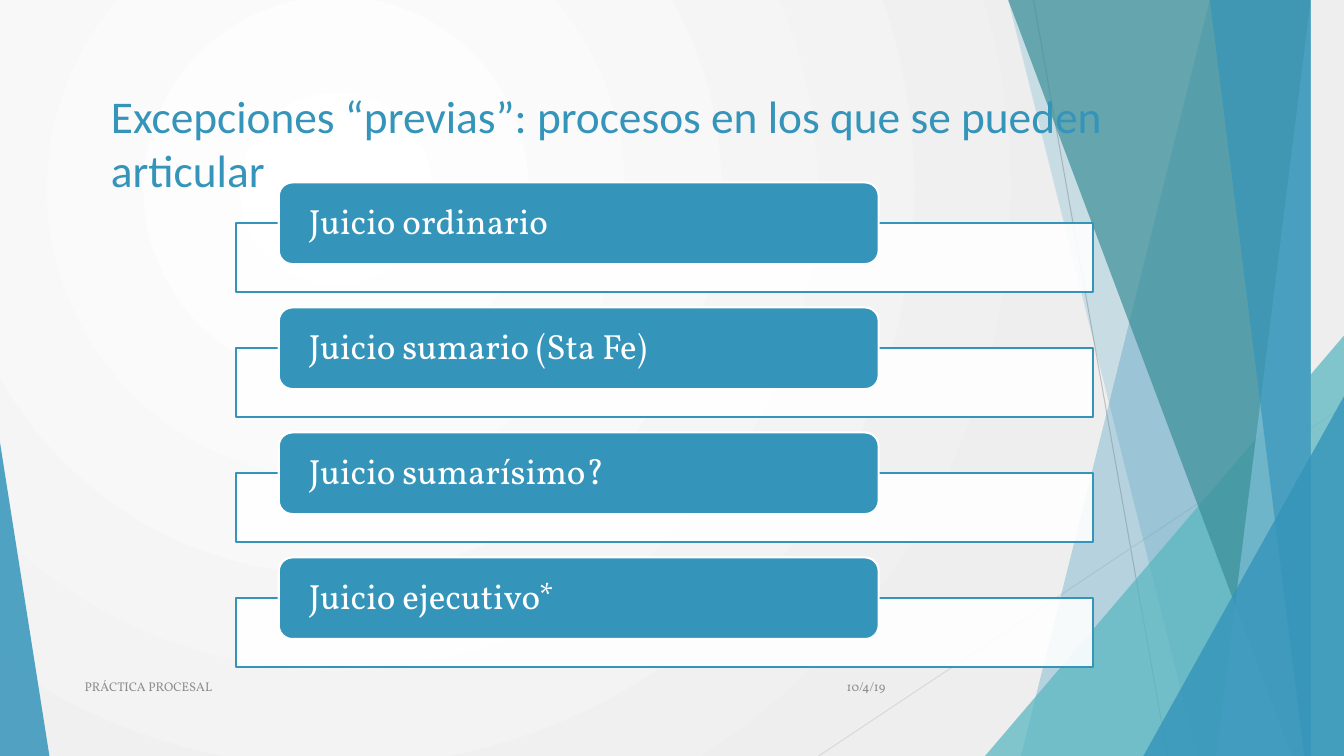
from lxml import etree
from pptx import Presentation
from pptx.dml.color import RGBColor
from pptx.enum.shapes import MSO_CONNECTOR as Conn, MSO_SHAPE as Form
from pptx.enum.text import MSO_ANCHOR as Anchor, MSO_AUTO_SIZE as Fit, PP_ALIGN as Align
from pptx.oxml.ns import qn
from pptx.util import Inches, Pt

WIDE, HIGH = 13.33, 7.5
HUES = {
    "blue": "3494BA", "aqua": "58B6C0", "teal": "3A8F98", "sky": "7FC1DB",
    "white": "FFFFFF", "mist": "EEEEEE", "grey": "8C8C8C",
    "line": "BFBFBF", "pale": "D9D9D9",
}
TRIALS = ["Juicio ordinario", "Juicio sumario (Sta Fe)",
          "Juicio sumarísimo?", "Juicio ejecutivo*"]


def hue(name):
    return RGBColor.from_string(HUES[name])


def paint(shape, fill, alpha=100, edge=None):
    shape.shadow.inherit = False
    shape.fill.solid()
    shape.fill.fore_color.rgb = hue(fill)
    if alpha < 100:
        tint = shape.fill._xPr.find(qn("a:solidFill"))[0]
        etree.SubElement(tint, qn("a:alpha")).set("val", str(alpha * 1000))
    if edge:
        shape.line.color.rgb = hue(edge)
        shape.line.width = Pt(1.5)
    else:
        shape.line.fill.background()


def add(slide, form, box):
    return slide.shapes.add_shape(form, *map(Inches, box))


def write(shape, text, size, face, color, align=Align.LEFT, anchor=Anchor.MIDDLE):
    frame = shape.text_frame
    frame.text = text
    frame.word_wrap = True
    frame.auto_size = Fit.NONE
    frame.vertical_anchor = anchor
    par = frame.paragraphs[0]
    par.alignment = align
    par.font.size, par.font.name = Pt(size), face
    par.font.color.rgb = hue(color)
    return frame


def backdrop(slide):
    fill = slide.background.fill
    fill.gradient()
    for stop, name in zip(fill.gradient_stops, ("white", "mist")):
        stop.color.rgb = hue(name)
    grad = slide.background.element.find(".//" + qn("a:gradFill"))
    grad.remove(grad.find(qn("a:lin")))
    way = etree.Element(qn("a:path"), path="circle")
    etree.SubElement(way, qn("a:fillToRect"), l="50000", t="50000", r="100000", b="100000")
    grad.find(qn("a:gsLst")).addnext(way)


def rule(slide, ends, color):
    line = slide.shapes.add_connector(Conn.STRAIGHT, *map(Inches, ends))
    line.line.color.rgb = hue(color)
    line.line.width = Pt(0.75)
    etree.SubElement(line.element.spPr, qn("a:effectLst"))


def blade(slide, top, foot, color, alpha):
    """Band from a slanted left side to the right edge of the slide."""
    pen = slide.shapes.build_freeform(top, 0, scale=Inches(1))
    pen.add_line_segments([(WIDE, 0), (WIDE, HIGH), (foot, HIGH)], close=True)
    paint(pen.convert_to_shape(), color, alpha)


def wedge(slide, left, top, wide, tip, color, alpha):
    """Triangle that stands on the bottom edge of the slide."""
    part = add(slide, Form.ISOSCELES_TRIANGLE, (left, top, wide, HIGH - top))
    part.adjustments[0] = tip
    paint(part, color, alpha)


def facets(slide):
    rule(slide, (10.25, 0, 11.58, HIGH), "line")
    rule(slide, (WIDE, 4.03, 8.12, HIGH), "pale")
    blade(slide, 12.28, 10.04, "blue", 30)
    blade(slide, 10.5, 11.83, "blue", 20)
    wedge(slide, 9.77, 3.33, 3.56, 1, "aqua", 72)
    blade(slide, 10.21, 12.91, "teal", 70)
    blade(slide, 13.03, 11.92, "sky", 70)
    blade(slide, 11.96, 13.18, "blue", 65)
    wedge(slide, 11.34, 3.93, 1.99, 1, "blue", 80)
    wedge(slide, 0, 4.39, 0.49, 0, "blue", 85)


def heading(slide, box):
    title = slide.shapes.title
    title.left, title.top, title.width, title.height = map(Inches, box)
    write(title, "Excepciones “previas”: procesos en los que se pueden articular",
          32.4, "Calibri", "blue", anchor=Anchor.TOP)
    # Bring the title in front of the facets
    title.element.getparent().append(title.element)


def trials(slide, box, names):
    left, top, wide, high = box
    tab, bar, lift = 0.81, 0.69, 0.4
    step = (high - lift - bar) / (len(names) - 1)
    for row, name in enumerate(names):
        y = top + row * step
        paint(add(slide, Form.RECTANGLE, (left, y + lift, wide, bar)), "white", 90, "blue")
        label = add(slide, Form.ROUNDED_RECTANGLE, (left + wide * 0.05, y, wide * 0.7, tab))
        paint(label, "blue", edge="white")
        frame = write(label, name, 25, "Vollkorn", "white")
        frame.margin_left = frame.margin_right = Inches(0.26)
        frame.margin_top = frame.margin_bottom = 0
        frame.paragraphs[0].line_spacing = 0.9


def footer(slide, box):
    left, top, wide, high = box
    day = 1
    for text, x, w, align in (
        ("10/4/19", left + wide - day, day, Align.RIGHT),
        ("PRÁCTICA PROCESAL", left, wide - day - 0.25, Align.LEFT),
    ):
        note = slide.shapes.add_textbox(*map(Inches, (x, top, w, high)))
        write(note, text, 9, "Vollkorn", "grey", align)


def main():
    deck = Presentation()
    deck.slide_width, deck.slide_height = Inches(WIDE), Inches(HIGH)
    slide = deck.slides.add_slide(deck.slide_layouts[5])
    backdrop(slide)
    facets(slide)
    heading(slide, (1, 0.82, 11.33, 1.2))
    trials(slide, (2.34, 1.81, 8.5, 4.81), TRIALS)
    footer(slide, (0.74, 6.61, 8.14, 0.4))
    deck.save("out.pptx")


if __name__ == "__main__":
    main()
